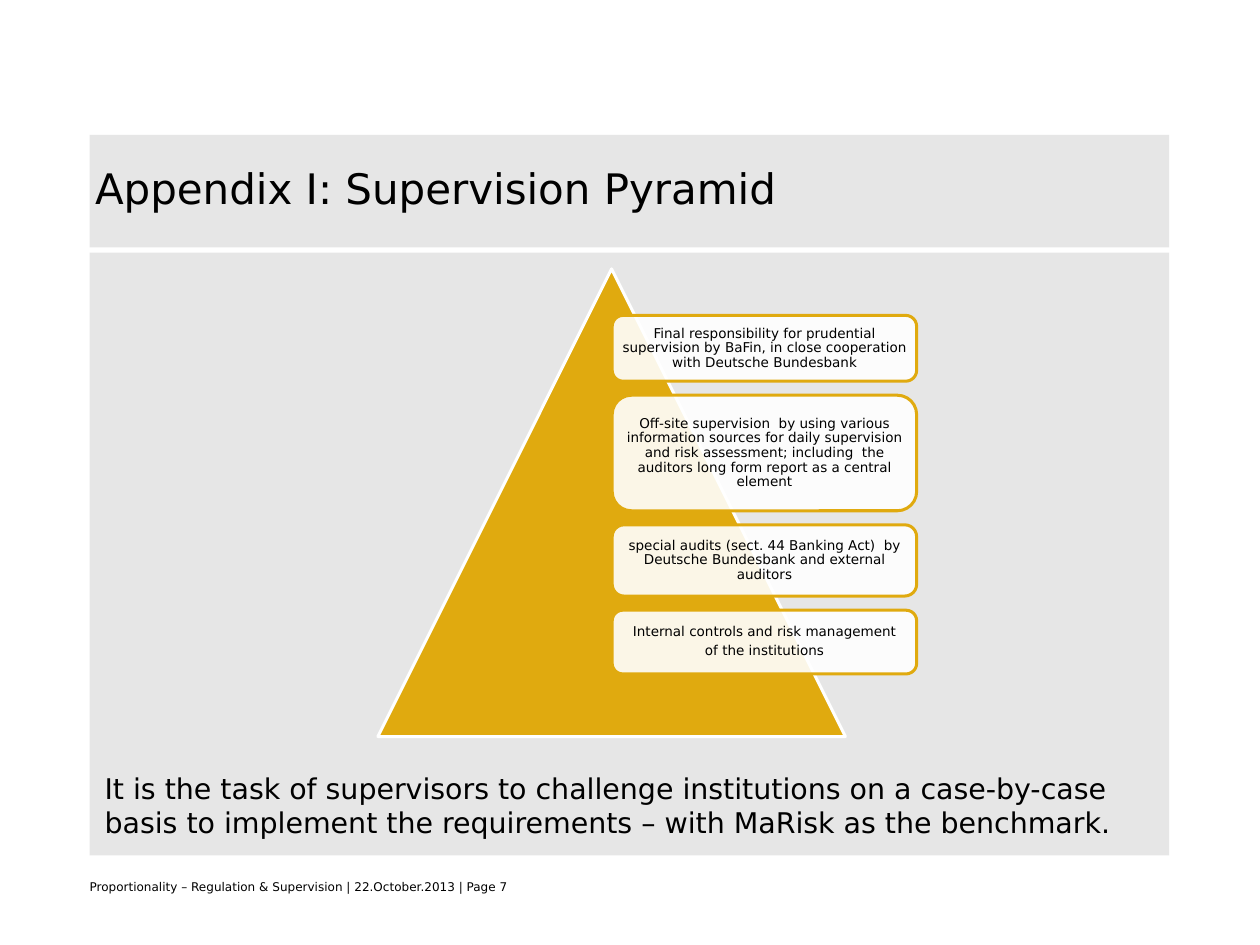
from dataclasses import dataclass

from lxml.etree import SubElement
from pptx import Presentation
from pptx.dml.color import RGBColor
from pptx.enum.shapes import MSO_SHAPE as Preset
from pptx.enum.text import MSO_ANCHOR as Anchor, MSO_AUTO_SIZE as AutoSize, PP_ALIGN as Align
from pptx.oxml.ns import qn
from pptx.util import Inches, Pt


@dataclass(frozen=True)
class Theme:
    font: str = "DejaVu Sans"
    text: RGBColor = RGBColor(0, 0, 0)
    panel: RGBColor = RGBColor(0xE6, 0xE6, 0xE6)
    gold: RGBColor = RGBColor(0xE0, 0xAA, 0x0F)
    white: RGBColor = RGBColor(0xFF, 0xFF, 0xFF)
    title_size: int = 28
    message_size: int = 19
    level_size: int = 9
    footer_size: int = 8
    outline: int = 2


THEME = Theme()

# Height in inches and paragraphs of each supervision level, top down
LEVELS = [
    (0.61, ["Final responsibility for prudential supervision by BaFin, "
            "in close cooperation with Deutsche Bundesbank"]),
    (1.07, ["Off-site supervision  by using various information sources "
            "for daily supervision and risk assessment; including  the "
            "auditors long form report as a central element"]),
    (0.66, ["special audits (sect. 44 Banking Act)  by Deutsche Bundesbank "
            "and external auditors"]),
    (0.59, ["Internal controls and risk management", "of the institutions"]),
]
LEVEL_TOP, LEVEL_GAP = 2.92, 0.13


def write(shape, lines, size, inset=(0, 0), anchor=Anchor.TOP, align=Align.LEFT,
          line_spacing=None, gap=0):
    """Fill a shape with paragraphs; inset is horizontal, vertical in inches."""
    frame = shape.text_frame
    frame.word_wrap = True
    frame.auto_size = AutoSize.NONE
    frame.vertical_anchor = anchor
    frame.margin_left = frame.margin_right = Inches(inset[0])
    frame.margin_top = frame.margin_bottom = Inches(inset[1])
    frame.text = "\n".join(lines)
    for index, para in enumerate(frame.paragraphs):
        para.alignment = align
        if line_spacing:
            para.line_spacing = line_spacing
        if index:
            para.space_before = Pt(gap)
        para.font.name = THEME.font
        para.font.size = Pt(size)
        para.font.color.rgb = THEME.text


def add_block(page, preset, place, fill, outline=None, opacity=100):
    block = page.shapes.add_shape(preset, *map(Inches, place))
    block.shadow.inherit = False
    block.fill.solid()
    block.fill.fore_color.rgb = fill
    if opacity < 100:
        color = block.element.spPr.find(qn("a:solidFill"))[0]
        SubElement(color, qn("a:alpha")).set("val", str(opacity * 1000))
    if outline is None:
        block.line.fill.background()
    else:
        block.line.color.rgb = outline
        block.line.width = Pt(THEME.outline)
    return block


def add_label(page, place, text, size, **style):
    box = page.shapes.add_textbox(*map(Inches, place))
    write(box, [text], size, **style)


def add_title(page, text):
    title = page.shapes.title
    title.left, title.top = Inches(0.88), Inches(1.17)
    title.width, title.height = Inches(10), Inches(1.1)
    write(title, [text], THEME.title_size, anchor=Anchor.MIDDLE, line_spacing=Pt(36))


def add_panels(page):
    """Grey panels, placed behind the title."""
    for top, height in ((2.34, 5.58), (1.25, 1.04)):
        panel = add_block(page, Preset.RECTANGLE, (0.83, top, 10, height), THEME.panel)
        page.shapes.title.element.addprevious(panel.element)


def add_pyramid(page):
    add_block(page, Preset.ISOSCELES_TRIANGLE, (3.5, 2.49, 4.33, 4.33),
              THEME.gold, THEME.white)
    top = LEVEL_TOP
    for height, lines in LEVELS:
        level = add_block(page, Preset.ROUNDED_RECTANGLE, (5.67, top, 2.82, height),
                          THEME.white, THEME.gold, opacity=90)
        write(level, lines, THEME.level_size, inset=(0.04, 0.04), anchor=Anchor.MIDDLE,
              align=Align.CENTER, line_spacing=0.9, gap=3)
        top += height + LEVEL_GAP


def main():
    deck = Presentation()
    deck.slide_width, deck.slide_height = Inches(11.67), Inches(8.75)
    page = deck.slides.add_slide(deck.slide_layouts[5])

    # Title and background
    add_title(page, "Appendix I: Supervision Pyramid")
    add_panels(page)

    # Pyramid and closing message
    add_pyramid(page)
    add_label(page, (0.87, 7.09, 9.92, 0.74),
              "It is the task of supervisors to challenge institutions on a case-by-case "
              "basis to implement the requirements – with MaRisk as the benchmark.",
              THEME.message_size, inset=(0.1, 0.05))

    # Footer
    add_label(page, (0.83, 8.14, 10, 0.41),
              "Proportionality – Regulation & Supervision | 22.October.2013 | Page 7",
              THEME.footer_size)

    deck.save("out.pptx")


if __name__ == "__main__":
    main()
